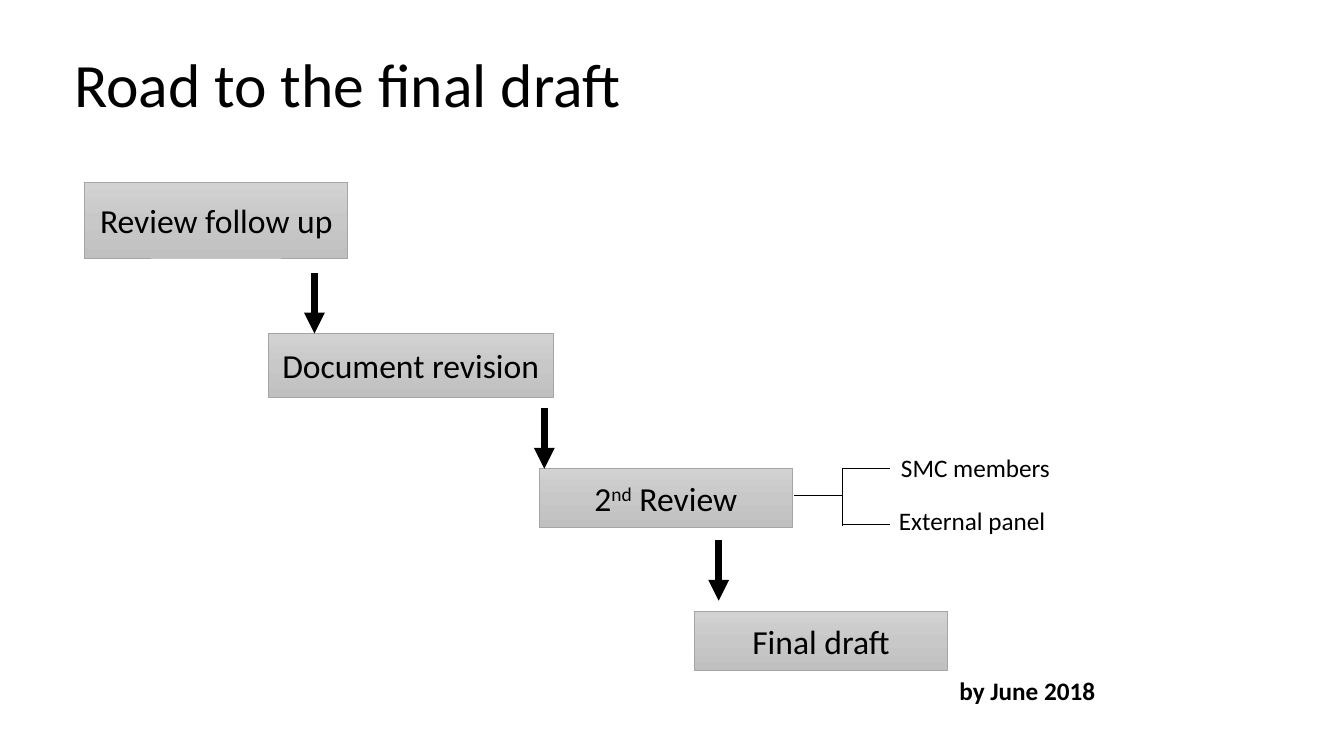
"""Build the slide that shows the steps on the road to the final draft."""
from copy import deepcopy
from dataclasses import dataclass

from lxml.etree import SubElement
from pptx import Presentation
from pptx.dml.color import RGBColor
from pptx.enum.shapes import MSO_CONNECTOR, MSO_SHAPE
from pptx.enum.text import MSO_ANCHOR, MSO_AUTO_SIZE, PP_ALIGN
from pptx.oxml.ns import qn
from pptx.util import Pt

TITLE = "Road to the final draft"
TITLE_AREA = (-165.6, -14.4, 828, 104.4)
REVIEW = (385.2, 334.8, 180.7, 41.8)
STEPS = [
    (["Review follow up"], (60.5, 130.3, 187.9, 54)),
    (["Document revision"], (191.5, 238.3, 203.8, 45.4)),
    (["Final draft"], (496.1, 437, 180.7, 41.8)),
    (["2", "^nd", " Review"], REVIEW),
]
ARROW_STARTS = [(224.6, 195.1), (388.8, 291.6), (513.4, 385.9)]
ARROW_LENGTH = 43.2
NOTES = [
    ("SMC members", (636.5, 319.7, 122.4, 29.1), False),
    ("External panel", (635, 357.1, 134.6, 29.1), False),
    ("by June 2018", (678.2, 478.8, 111.6, 29.1), True),
]
BRACKET_ARM = 34
BRACKET_TOP, BRACKET_BOTTOM = 334.1, 375.8
BRANCH_LEVELS = (334.8, 374.4)


@dataclass(frozen=True)
class Theme:
    """Colours, font and sizes of the slide."""
    font: str = "Calibri"
    ink: str = "000000"
    edge: str = "A5A5A5"
    shades: tuple = ("D2D2D2", "C8C8C8", "C0C0C0")
    title: int = 44
    step: int = 24
    note: int = 18
    thin: float = 0.5
    thick: float = 5


THEME = Theme()


def points(values):
    """Turn numbers into lengths in points."""
    return [Pt(value) for value in values]


def write(frame, parts, *, size, align=PP_ALIGN.LEFT, anchor=MSO_ANCHOR.TOP,
          bold=False, wrap=True, spacing=None):
    """Fill a text frame with one paragraph; parts led by ^ are superscript."""
    frame.word_wrap = wrap
    frame.vertical_anchor = anchor
    paragraph = frame.paragraphs[0]
    paragraph.alignment = align
    paragraph.line_spacing = spacing
    for part in parts:
        run = paragraph.add_run()
        run.text = part.lstrip("^")
        run.font.name = THEME.font
        run.font.size = Pt(size)
        run.font.bold = bold
        run.font.color.rgb = RGBColor.from_string(THEME.ink)
        if part.startswith("^"):
            run._r.get_or_add_rPr().set("baseline", "30000")


def add_step(shapes, parts, area):
    """Draw one shaded step box."""
    step = shapes.add_shape(MSO_SHAPE.RECTANGLE, *points(area))
    step.shadow.inherit = False
    step.fill.gradient()
    step.fill.gradient_angle = 270
    stops = step._element.spPr.find(".//" + qn("a:gsLst"))
    stops.insert(1, deepcopy(stops[0]))
    for index, (stop, shade) in enumerate(zip(step.fill.gradient_stops, THEME.shades)):
        stop.position = index / 2
        stop.color.rgb = RGBColor.from_string(shade)
    step.line.color.rgb = RGBColor.from_string(THEME.edge)
    step.line.width = Pt(THEME.thin)
    write(step.text_frame, parts, size=THEME.step, align=PP_ALIGN.CENTER,
          anchor=MSO_ANCHOR.MIDDLE)


def add_line(shapes, start, end, width=THEME.thin, arrow=False):
    """Draw a straight line, with an arrowhead at its end if asked."""
    line = shapes.add_connector(MSO_CONNECTOR.STRAIGHT, *points(start + end))
    line.line.color.rgb = RGBColor.from_string(THEME.ink)
    line.line.width = Pt(width)
    if arrow:
        SubElement(line.line._get_or_add_ln(), qn("a:tailEnd"), type="triangle")
    SubElement(line._element.spPr, qn("a:effectLst"))


def add_bracket(shapes):
    """Split the second review into its two groups of reviewers."""
    left, top, width, height = REVIEW
    stem = left + width + 1.5
    spine = stem + BRACKET_ARM
    middle = top + height / 2 - 2
    add_line(shapes, (stem, middle), (spine, middle))
    add_line(shapes, (spine, BRACKET_TOP), (spine, BRACKET_BOTTOM))
    for level in BRANCH_LEVELS:
        add_line(shapes, (spine, level), (spine + BRACKET_ARM, level))


def main():
    """Build and save the slide."""
    deck = Presentation()
    deck.slide_width, deck.slide_height = Pt(960), Pt(540)
    shapes = deck.slides.add_slide(deck.slide_layouts[5]).shapes
    heading = shapes.title
    heading.left, heading.top, heading.width, heading.height = points(TITLE_AREA)
    write(heading.text_frame, [TITLE], size=THEME.title, align=PP_ALIGN.CENTER,
          anchor=MSO_ANCHOR.BOTTOM, spacing=0.9)
    for parts, area in STEPS:
        add_step(shapes, parts, area)
    for x, y in ARROW_STARTS:
        add_line(shapes, (x, y), (x, y + ARROW_LENGTH), THEME.thick, arrow=True)
    add_bracket(shapes)
    for note, area, bold in NOTES:
        label = shapes.add_textbox(*points(area)).text_frame
        label.auto_size = MSO_AUTO_SIZE.SHAPE_TO_FIT_TEXT
        write(label, [note], size=THEME.note, bold=bold, wrap=False)
    deck.save("out.pptx")


if __name__ == "__main__":
    main()
